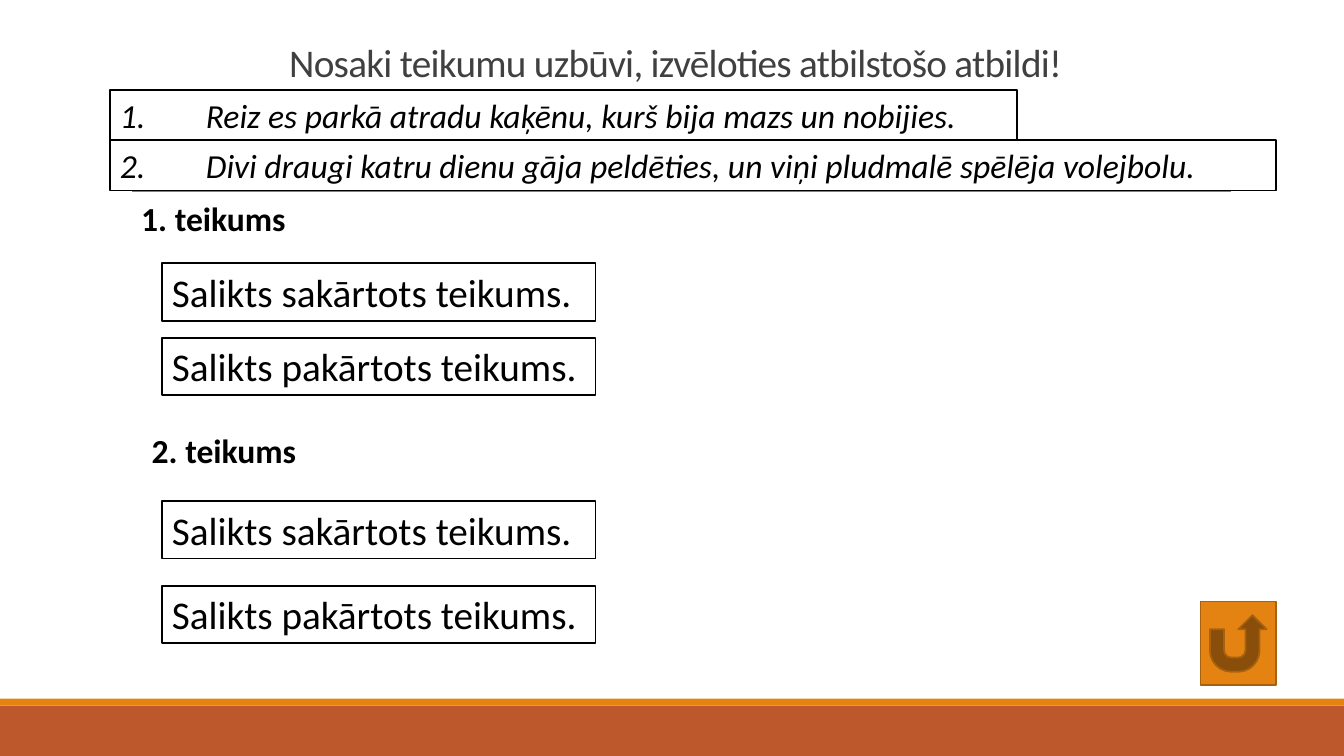
from dataclasses import dataclass

from lxml import etree
from pptx import Presentation
from pptx.dml.color import RGBColor
from pptx.enum.shapes import MSO_CONNECTOR, MSO_SHAPE
from pptx.enum.text import MSO_ANCHOR, MSO_AUTO_SIZE, PP_ALIGN
from pptx.oxml.ns import qn
from pptx.util import Pt

RECT = MSO_SHAPE.RECTANGLE
RETURN_BUTTON = MSO_SHAPE.ACTION_BUTTON_RETURN
STRAIGHT = MSO_CONNECTOR.STRAIGHT
LEFT, CENTER = PP_ALIGN.LEFT, PP_ALIGN.CENTER
TOP, BOTTOM = MSO_ANCHOR.TOP, MSO_ANCHOR.BOTTOM
NO_FIT, GROW = MSO_AUTO_SIZE.NONE, MSO_AUTO_SIZE.SHAPE_TO_FIT_TEXT


@dataclass(frozen=True)
class Theme:
    font: str = "Calibri"
    text: str = "000000"
    title: str = "404040"
    paper: str = "FFFFFF"
    orange: str = "E48312"
    rust: str = "BD582C"
    button_edge: str = "A9610D"
    rule: str = "808080"
    large: float = 28
    body: float = 24
    edge: float = 1.25


THEME = Theme()
SLIDE_W, SLIDE_H = 960, 540
ANSWERS = ["Salikts sakārtots teikums.", "Salikts pakārtots teikums."]
SENTENCES = [
    ("Reiz es parkā atradu kaķēnu, kurš bija mazs un nobijies.", 648),
    ("Divi draugi katru dienu gāja peldēties, un viņi pludmalē spēlēja volejbolu.", 833),
]


def rgb(value):
    return RGBColor.from_string(value)


def add_box(slide, box, fill, line=None, kind=RECT):
    s = slide.shapes.add_shape(kind, *map(Pt, box))
    s.shadow.inherit = False
    s.fill.solid()
    s.fill.fore_color.rgb = rgb(fill)
    if line:
        s.line.color.rgb = rgb(line)
        s.line.width = Pt(THEME.edge)
    else:
        s.line.fill.background()
    return s


def write(s, text, size, color=THEME.text, align=LEFT, anchor=TOP, fit=GROW):
    tf = s.text_frame
    tf.word_wrap = True
    tf.auto_size = fit
    tf.vertical_anchor = anchor
    p = tf.paragraphs[0]
    p.text = text
    p.alignment = align
    p.font.name = THEME.font
    p.font.size = Pt(size)
    p.font.color.rgb = rgb(color)
    return p


def add_footer(slide, left, top, width, height):
    stripe = 5
    add_box(slide, (left, top + stripe, width, height - stripe), THEME.rust)
    add_box(slide, (left, top, width, stripe), THEME.orange)


def add_rule(slide, left, top, width):
    line = slide.shapes.add_connector(STRAIGHT, Pt(left), Pt(top), Pt(left + width), Pt(top))
    line.line.color.rgb = rgb(THEME.rule)
    line.line.width = Pt(0.5)
    etree.SubElement(line._element.spPr, qn("a:effectLst"))


def add_title(slide, left, top, width, height, text):
    s = slide.shapes.title
    s.left, s.top, s.width, s.height = map(Pt, (left, top, width, height))
    p = write(s, text, THEME.large, THEME.title, CENTER, BOTTOM, NO_FIT)
    p.line_spacing = 0.85
    p.runs[0]._r.get_or_add_rPr().set("spc", "-50")


def add_sentences(slide, left, top, row_height):
    indent = Pt(61.5)
    for i, (sentence, width) in enumerate(SENTENCES):
        s = add_box(slide, (left, top + i * row_height, width, row_height),
                    THEME.paper, THEME.text)
        p = write(s, f"{i + 1}.\t{sentence}", THEME.body)
        p.font.italic = True
        # Hanging indent for the sentence number
        pPr = p._p.get_or_add_pPr()
        pPr.set("marL", str(indent))
        pPr.set("indent", str(-indent))


def add_question(slide, left, top, width, label, label_shift, first, step):
    """Heading above answer boxes; first and step space the boxes downwards."""
    heading = slide.shapes.add_textbox(
        Pt(left - label_shift), Pt(top), Pt(119), Pt(36))
    write(heading, label, THEME.body).font.bold = True
    for i, answer in enumerate(ANSWERS):
        s = add_box(slide, (left, top + first + i * step, width, 41.2),
                    THEME.paper, THEME.text)
        write(s, answer, THEME.large)


def build_quiz_slide(prs):
    slide = prs.slides.add_slide(prs.slide_layouts[5])
    # Background bands and rule
    add_footer(slide, 0, 499, SLIDE_W, SLIDE_H - 499)
    add_rule(slide, 94.5, 136.8, 784.5)
    # Title
    add_title(slide, 86.4, 22.3, 792, 42.5,
              "Nosaki teikumu uzbūvi, izvēloties atbilstošo atbildi!")
    # Questions with their answers
    add_question(slide, 115.8, 138.2, 309.6, "1. teikums", 22, 49.8, 53.2)
    add_question(slide, 115.8, 303.6, 309.6, "2. teikums", 14.5, 54.2, 60.5)
    # Return button
    add_box(slide, (857.5, 429.7, 54, 59.8), THEME.orange, THEME.button_edge, RETURN_BUTTON)
    # Sentences to analyse
    add_sentences(slide, 78.5, 64.2, 36)


def main():
    prs = Presentation()
    prs.slide_width, prs.slide_height = Pt(SLIDE_W), Pt(SLIDE_H)
    build_quiz_slide(prs)
    prs.save("out.pptx")


if __name__ == "__main__":
    main()
